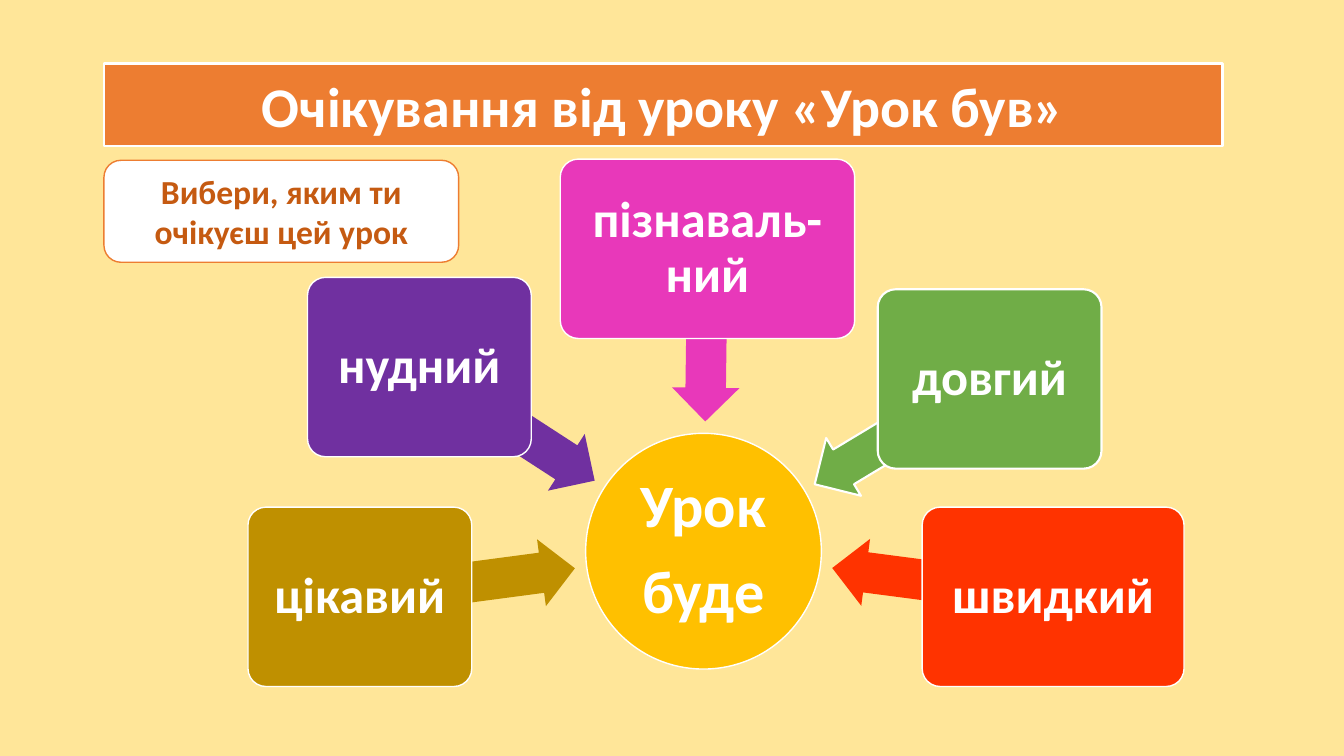
import math
from pptx import Presentation
from pptx import util as u
from pptx.dml import color
from pptx.enum import shapes, text

SHAPE = shapes.MSO_SHAPE


def rgb(value):
    return color.RGBColor.from_string(value)


class LessonSlide:
    font = "Calibri"
    white = "FFFFFF"
    hub_x, hub_y, hub_size = 17.73, 13.89, 5.94
    tip_distance = 3.27
    arrow_height = 1.7
    box_height = 4.52

    def __init__(self, prs, background):
        self.s = prs.slides.add_slide(prs.slide_layouts[6])
        self.s.background.fill.solid()
        self.s.background.fill.fore_color.rgb = rgb(background)

    def shape(self, kind, left, top, width, height, fill, line=None, weight=1):
        sp = self.s.shapes.add_shape(
            kind, u.Cm(left), u.Cm(top), u.Cm(width), u.Cm(height))
        sp.shadow.inherit = False
        sp.fill.solid()
        sp.fill.fore_color.rgb = rgb(fill)
        if line:
            sp.line.color.rgb = rgb(line)
            sp.line.width = u.Pt(weight)
        else:
            sp.line.fill.background()
        return sp

    def label(self, sp, words, size, ink=white, inset=None, diagram=False):
        tf = sp.text_frame
        tf.text = words
        tf.word_wrap = True
        tf.vertical_anchor = text.MSO_ANCHOR.MIDDLE
        if inset is not None:
            tf.margin_left = tf.margin_right = u.Cm(inset)
            tf.margin_top = tf.margin_bottom = u.Cm(inset)
        for p in tf.paragraphs:
            p.alignment = text.PP_ALIGN.CENTER
            if diagram:
                p.line_spacing = 0.9
                p.space_after = u.Pt(round(size * 0.35))
            for r in p.runs:
                r.font.name = self.font
                r.font.size = u.Pt(size)
                r.font.bold = True
                r.font.color.rgb = rgb(ink)

    def title(self, words):
        sp = self.shape(SHAPE.RECTANGLE, 2.62, 1.6, 28.19, 2.08,
                        "ED7D31", self.white, 1.5)
        self.label(sp, words, 40)

    def hub(self, words):
        half = self.hub_size / 2
        sp = self.shape(SHAPE.OVAL, self.hub_x - half, self.hub_y - half,
                        self.hub_size, self.hub_size, "FFC000", self.white)
        self.label(sp, words, 43, inset=0.08, diagram=True)

    def arrow(self, x, y, fill, line, weight):
        dx, dy = self.hub_x - x, self.hub_y - y
        distance = math.hypot(dx, dy)
        length = distance - self.tip_distance
        part = length / distance / 2
        sp = self.shape(SHAPE.LEFT_ARROW, x + dx * part - length / 2,
                        y + dy * part - self.arrow_height / 2,
                        length, self.arrow_height, fill, line, weight)
        sp.adjustments[0] = 0.6
        sp.adjustments[1] = 0.5
        sp.rotation = math.degrees(math.atan2(dy, dx)) + 180

    def option(self, words, left, top, width, fill, arrow_line=None, weight=1):
        self.arrow(left + width / 2, top + self.box_height / 2,
                   fill, arrow_line, weight)
        sp = self.shape(SHAPE.ROUNDED_RECTANGLE, left, top, width,
                        self.box_height, fill, self.white, weight)
        sp.adjustments[0] = 0.1
        self.label(sp, words, 36, inset=0.18, diagram=True)

    def note(self, words):
        sp = self.shape(SHAPE.ROUNDED_RECTANGLE, 2.62, 4.04, 8.94, 2.57,
                        self.white, "ED7D31")
        self.label(sp, words, 24, "C55A11")


def main():
    prs = Presentation()
    prs.slide_width, prs.slide_height = u.Cm(33.87), u.Cm(19.05)
    lesson = LessonSlide(prs, "FFE699")
    lesson.title("Очікування від уроку «Урок був»")
    lesson.hub("Урок\nбуде")
    lesson.option("цікавий", 6.25, 12.78, 5.64, "BF9000")
    lesson.option("нудний", 7.75, 6.99, 5.64, "7030A0")
    lesson.option("пізнаваль-ний", 14.12, 4.01, 7.42, "E838BA")
    lesson.option("довгий", 22.12, 7.29, 5.64, "70AD47", "FFFFFF", 1.5)
    lesson.option("швидкий", 23.24, 12.78, 6.6, "FF3300")
    lesson.note("Вибери, яким ти очікуєш цей урок")
    prs.save("out.pptx")


if __name__ == "__main__":
    main()
